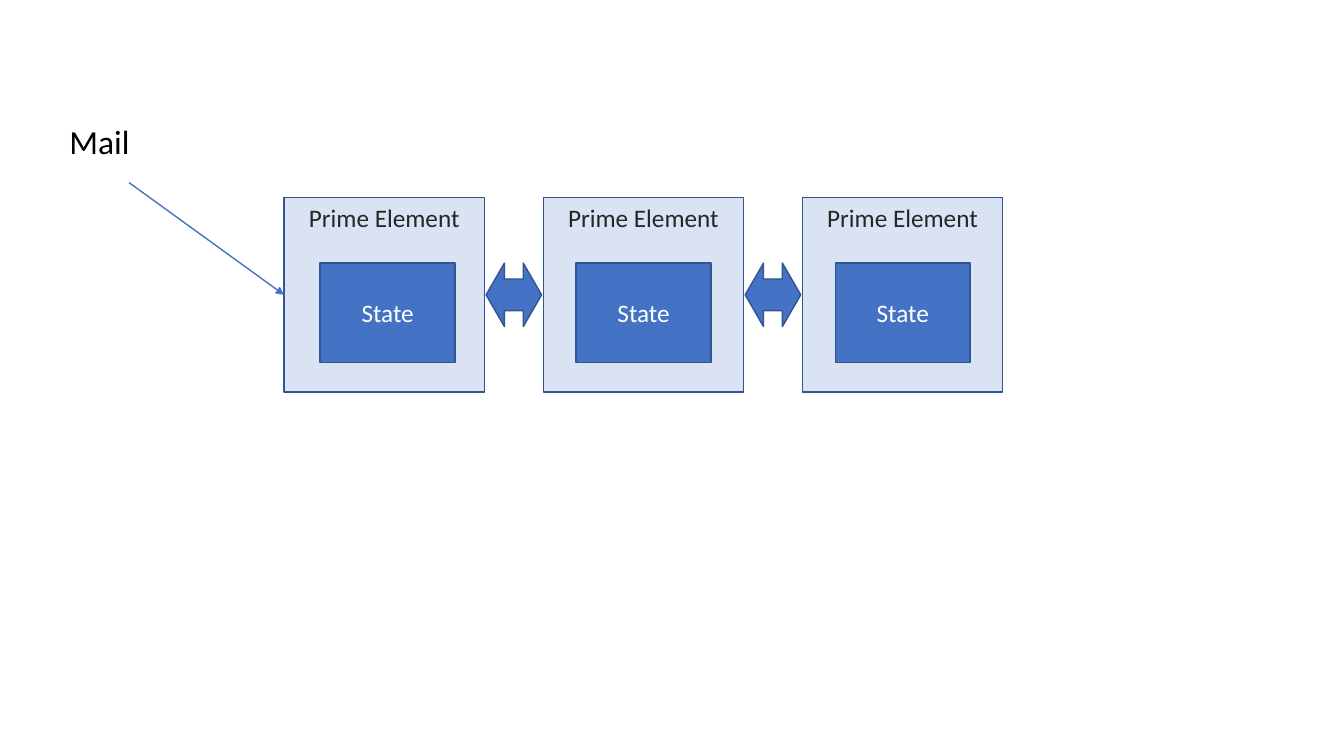
import pptx
import pptx.dml.color
import pptx.enum.dml
import pptx.enum.shapes
import pptx.enum.text
import pptx.oxml
import pptx.oxml.ns
import pptx.util
from pptx.util import Cm

RGBColor = pptx.dml.color.RGBColor
Shapes = pptx.enum.shapes.MSO_SHAPE
Anchor = pptx.enum.text.MSO_ANCHOR
Align = pptx.enum.text.PP_ALIGN

BLUE = RGBColor(0x44, 0x72, 0xC4)
PALE_BLUE = RGBColor(0xDA, 0xE3, 0xF3)
OUTLINE = RGBColor(0x32, 0x54, 0x91)
DARK = RGBColor(0x26, 0x26, 0x26)
BLACK = RGBColor(0, 0, 0)
WHITE = RGBColor(0xFF, 0xFF, 0xFF)

ELEMENT_WIDTH, ELEMENT_HEIGHT = Cm(5.05), Cm(4.9)
PITCH = Cm(6.53)
INNER_TOP = Cm(1.65)
STATE_INSETS = [Cm(0.91), Cm(0.83), Cm(0.83)]


def add_outlined(page, kind, left, top, width, height, fill):
    shape = page.shapes.add_shape(kind, left, top, width, height)
    shape.shadow.inherit = False
    shape.fill.solid()
    shape.fill.fore_color.rgb = fill
    shape.line.color.rgb = OUTLINE
    shape.line.width = pptx.util.Pt(1)
    return shape


def write(box, text, size, color, align, anchor):
    frame = box.text_frame
    frame.vertical_anchor = anchor
    para = frame.paragraphs[0]
    para.alignment = align
    span = para.add_run()
    span.text = text
    span.font.name = "Calibri"
    span.font.size = pptx.util.Pt(size)
    span.font.color.rgb = color


def add_prime_element(page, left, top, state_inset):
    """Draw a Prime Element box holding its State; return the outer box."""
    element = add_outlined(page, Shapes.RECTANGLE, left, top,
                           ELEMENT_WIDTH, ELEMENT_HEIGHT, PALE_BLUE)
    write(element, "Prime Element", 18, DARK, Align.CENTER, Anchor.TOP)
    state = add_outlined(page, Shapes.RECTANGLE, left + state_inset,
                         top + INNER_TOP, Cm(3.4), Cm(2.51), BLUE)
    write(state, "State", 18, WHITE, Align.CENTER, Anchor.MIDDLE)
    return element


def add_exchange_arrow(page, element):
    """Draw the two-way arrow in the gap to the right of an element."""
    width = Cm(1.4)
    left = element.left + ELEMENT_WIDTH + (PITCH - ELEMENT_WIDTH - width) // 2
    arrow = add_outlined(page, Shapes.LEFT_RIGHT_ARROW, left,
                         element.top + INNER_TOP, width, Cm(1.6), BLUE)
    arrow.adjustments[1] = 0.33


def add_element_chain(page, left, top):
    elements = [add_prime_element(page, left + index * PITCH, top, inset)
                for index, inset in enumerate(STATE_INSETS)]
    for element in elements[:-1]:
        add_exchange_arrow(page, element)
    return elements


def add_mail(page, left, top, target):
    """Draw the Mail label and its arrow into the target element."""
    label = page.shapes.add_textbox(left, top, Cm(2.13), Cm(1.27))
    label.text_frame.word_wrap = True
    label.text_frame.auto_size = pptx.enum.text.MSO_AUTO_SIZE.SHAPE_TO_FIT_TEXT
    write(label, "Mail", 24, BLACK, Align.LEFT, Anchor.TOP)

    arrow = page.shapes.add_connector(
        pptx.enum.shapes.MSO_CONNECTOR.STRAIGHT, left + Cm(1.75),
        top + Cm(1.68), target.left, target.top + target.height // 2)
    arrow.end_connect(target, 1)
    arrow.line.color.rgb = BLUE
    arrow.line.width = pptx.util.Pt(1)
    line = arrow.line._get_or_add_ln()
    line.append(pptx.oxml.parse_xml(
        f'<a:tailEnd {pptx.oxml.ns.nsdecls("a")} type="triangle"/>'))
    arrow._element.spPr.append(pptx.oxml.parse_xml(
        f'<a:effectLst {pptx.oxml.ns.nsdecls("a")}/>'))


def main():
    deck = pptx.Presentation()
    deck.slide_width, deck.slide_height = Cm(33.87), Cm(19.05)
    page = deck.slides.add_slide(deck.slide_layouts[6])
    elements = add_element_chain(page, Cm(7.16), Cm(4.98))
    add_mail(page, Cm(1.5), Cm(2.92), elements[0])
    deck.save("out.pptx")


if __name__ == "__main__":
    main()
